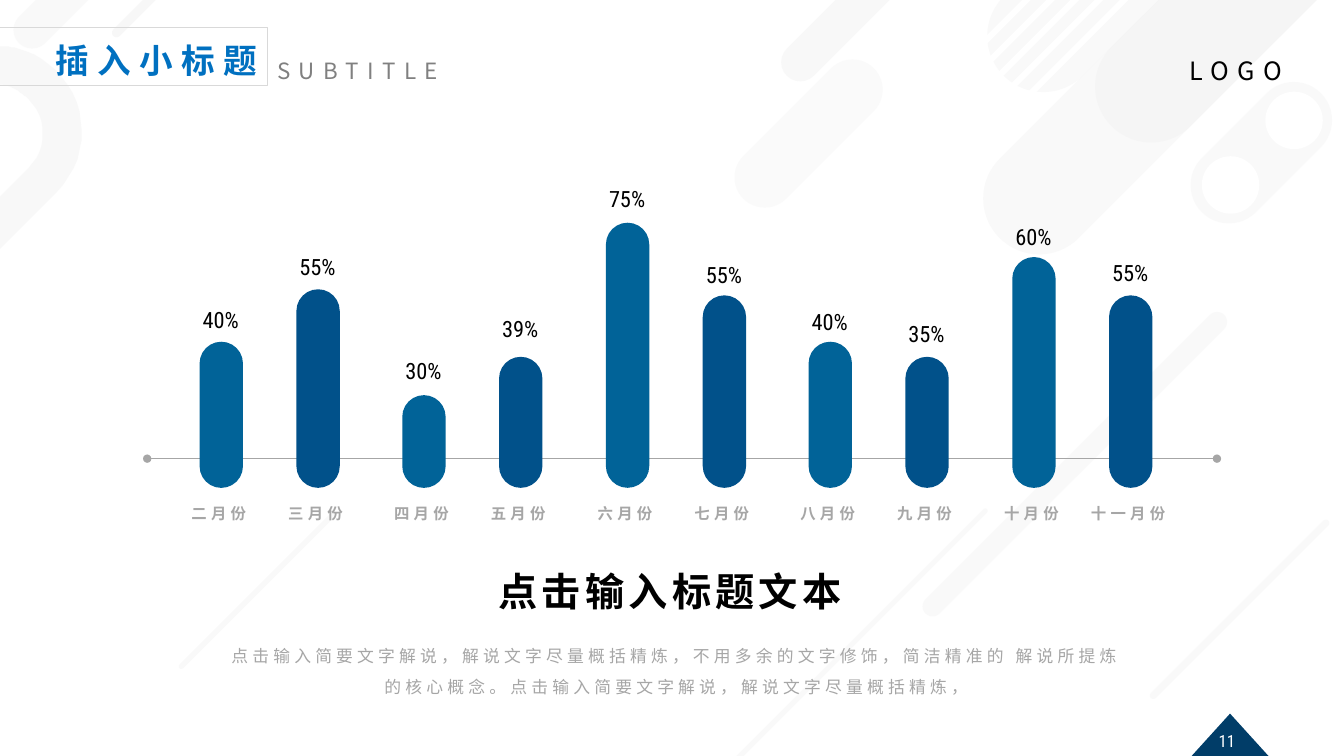
import pptx
import pptx.util
import pptx.dml.color
import pptx.enum.shapes
import pptx.enum.text
import pptx.oxml.ns
import lxml.etree

RGBColor = pptx.dml.color.RGBColor
SHAPE = pptx.enum.shapes.MSO_SHAPE
ALIGN = pptx.enum.text.PP_ALIGN
ANCHOR = pptx.enum.text.MSO_ANCHOR
qn = pptx.oxml.ns.qn

PX = 9144  # EMU in one px, 100 px to the inch

WHITE = RGBColor(0xFF, 0xFF, 0xFF)
BLACK = RGBColor(0x00, 0x00, 0x00)
PALE = RGBColor(0xF2, 0xF2, 0xF2)
BORDER = RGBColor(0xD9, 0xD9, 0xD9)
GREY = RGBColor(0xA6, 0xA6, 0xA6)
DARK_GREY = RGBColor(0x80, 0x80, 0x80)
TITLE_BLUE = RGBColor(0x00, 0x70, 0xC0)
NAVY = RGBColor(0x01, 0x3D, 0x68)
BAR_COLORS = (RGBColor(0x01, 0x63, 0x98), RGBColor(0x01, 0x51, 0x8A))

SANS = "Noto Sans CJK SC"
SANS_JP = "Noto Sans CJK JP"
CONDENSED = "Roboto Condensed"

# Background capsules: left, top, width, height, opacity in percent
CAPSULES = [
    (1153, -288, 111, 614, 46), (1264, -399, 111, 614, 50),
    (1157, -449, 111, 614, 45), (1213, 68, 76, 167, 40),
    (253, 476, 5, 219, 45), (829, 444, 5, 417, 40),
    (1056, 251, 20, 419, 40), (772, 41, 60, 183, 37),
    (826, -81, 38, 183, 50), (1226, 480, 7, 249, 40),
    (157, -83, 9, 139, 60), (49, -75, 37, 138, 40),
]
HOLES = [(1255, 91), (1192, 155)]

# Outline of the ring at the left edge: two points are a line, six a curve
RING_START = (0, 46)
RING = [
    (8, 46), (20, 48, 32, 52, 42, 59), (56, 70), (67, 84),
    (89, 117, 85, 162, 56, 191), (0, 247), (0, 195), (28, 167),
    (47, 148, 47, 117, 28, 98), (21, 91, 12, 86, 3, 84), (0, 84),
]

# Month, value, top of the bar, top of the value label
BARS = [
    ("二月份", "40%", 339, 299), ("三月份", "55%", 287, 246),
    ("四月份", "30%", 392, 349), ("五月份", "39%", 354, 308),
    ("六月份", "75%", 221, 179), ("七月份", "55%", 293, 254),
    ("八月份", "40%", 339, 301), ("九月份", "35%", 354, 313),
    ("十月份", "60%", 255, 216), ("十一月份", "55%", 293, 252),
]
BAR_BOTTOM = 484

DESCRIPTION = ("点击输入简要文字解说，解说文字尽量概括精炼，不用多余的文字修饰，简洁精准的 "
               "解说所提炼的核心概念。点击输入简要文字解说，解说文字尽量概括精炼，")


def scaled(*lengths):
    return [length * PX for length in lengths]


def set_fill(shape, color, opacity=100):
    shape.shadow.inherit = False
    shape.line.fill.background()
    shape.fill.solid()
    shape.fill.fore_color.rgb = color
    if opacity < 100:
        color_element = shape._element.spPr.find(qn("a:solidFill"))[0]
        alpha = lxml.etree.SubElement(color_element, qn("a:alpha"))
        alpha.set("val", str(opacity * 1000))


def add_filled(slide, kind, box, color, opacity=100, rotation=0):
    shape = slide.shapes.add_shape(kind, *scaled(*box))
    if kind == SHAPE.ROUNDED_RECTANGLE:
        shape.adjustments[0] = 0.5
    shape.rotation = rotation
    set_fill(shape, color, opacity)
    return shape


def write(shape, text, size, color, font=SANS, bold=False, spacing=0,
          align=ALIGN.LEFT, anchor=ANCHOR.TOP, wrap=True, inset=None):
    frame = shape.text_frame
    frame.text = text
    frame.word_wrap = wrap
    frame.auto_size = pptx.enum.text.MSO_AUTO_SIZE.NONE
    frame.vertical_anchor = anchor
    if inset is not None:
        frame.margin_left = frame.margin_right = inset
        frame.margin_top = frame.margin_bottom = inset
    paragraph = frame.paragraphs[0]
    paragraph.alignment = align
    run = paragraph.runs[0]
    run.font.size = pptx.util.Pt(size)
    run.font.bold = bold
    run.font.name = font
    run.font.color.rgb = color
    properties = run.font._element
    properties.set("spc", str(spacing * 100))
    east_asian = lxml.etree.Element(qn("a:ea"))
    east_asian.set("typeface", SANS if font == CONDENSED else font)
    properties.find(qn("a:latin")).addnext(east_asian)
    return paragraph


def add_text(slide, box, text, size, color, **style):
    return write(slide.shapes.add_textbox(*scaled(*box)), text, size, color, **style)


def place(slide, placeholder, box):
    """Move a placeholder to its box, in front of the background."""
    placeholder.left, placeholder.top, placeholder.width, placeholder.height = scaled(*box)
    slide.shapes._spTree.append(placeholder._element)


def curve_points(start, curve, steps=12):
    """Points along a cubic curve, without its start."""
    controls = [start, curve[0:2], curve[2:4], curve[4:6]]
    for step in range(1, steps + 1):
        t = step / steps
        weights = ((1 - t) ** 3, 3 * t * (1 - t) ** 2, 3 * t * t * (1 - t), t ** 3)
        yield tuple(sum(w * c[axis] for w, c in zip(weights, controls)) for axis in (0, 1))


def add_ring(slide):
    points = [RING_START]
    for part in RING:
        points.extend([part] if len(part) == 2 else list(curve_points(points[-1], part)))
    builder = slide.shapes.build_freeform(*RING_START, scale=PX)
    builder.add_line_segments(points[1:], close=True)
    set_fill(builder.convert_to_shape(), PALE, 50)


def add_background(slide):
    add_ring(slide)
    for *box, opacity in CAPSULES:
        add_filled(slide, SHAPE.ROUNDED_RECTANGLE, box, PALE, opacity, 45)
    for left, top in HOLES:
        add_filled(slide, SHAPE.OVAL, (left, top, 57, 57), WHITE)
    for index in range(5):
        stripe = (969 + index * 97 // 4, -239, 6, 570)
        add_filled(slide, SHAPE.ROUNDED_RECTANGLE, stripe, WHITE, rotation=45)


def add_axis(slide):
    axis = slide.shapes.add_connector(
        pptx.enum.shapes.MSO_CONNECTOR.STRAIGHT, *scaled(146, 455, 1207, 455))
    axis.line.color.rgb = GREY
    axis.line.width = pptx.util.Pt(0.5)
    line = axis.line._get_or_add_ln()
    for end in ("a:headEnd", "a:tailEnd"):
        lxml.etree.SubElement(line, qn(end)).set("type", "oval")
    lxml.etree.SubElement(axis._element.spPr, qn("a:effectLst"))


def add_bar(slide, index, month, value, top, value_top):
    pair, side = divmod(index, 2)
    left = 198 + pair * 403 // 2 + side * 96
    add_filled(slide, SHAPE.ROUNDED_RECTANGLE, (left, top, 43, BAR_BOTTOM - top), BAR_COLORS[side])
    add_text(slide, (left - 34, 495, 106, 29), month, 11, GREY, font=CONDENSED,
             bold=True, spacing=3, align=ALIGN.CENTER)
    add_text(slide, (left - 32, value_top, 106, 37), value, 16, BLACK,
             font=CONDENSED, align=ALIGN.CENTER)


def add_header(slide):
    title = slide.shapes.title
    place(slide, title, (-113, 27, 378, 58))
    title.line.color.rgb = BORDER
    title.line.width = pptx.util.Pt(0.75)
    write(title, "插入小标题", 24, TITLE_BLUE, bold=True, spacing=6,
          align=ALIGN.RIGHT, anchor=ANCHOR.BOTTOM)
    add_text(slide, (265, 52, 188, 37), "SUBTITLE", 16, DARK_GREY,
             font=SANS_JP, spacing=6, wrap=False)
    add_text(slide, (1170, 50, 126, 40), "LOGO", 18, BLACK, spacing=6, wrap=False)


def add_summary(slide):
    add_text(slide, (480, 563, 369, 47), "点击输入标题文本", 28, BLACK, bold=True,
             spacing=3, align=ALIGN.CENTER, inset=0)
    body = slide.placeholders[1]
    place(slide, body, (224, 631, 894, 57))
    paragraph = write(body, DESCRIPTION, 12, GREY, spacing=3, align=ALIGN.CENTER, inset=0)
    paragraph.line_spacing = 1.5
    paragraph.space_before = pptx.util.Pt(0)
    properties = paragraph._p.get_or_add_pPr()
    properties.set("marL", "0")
    properties.set("indent", "0")
    lxml.etree.SubElement(properties, qn("a:buNone"))


def main():
    presentation = pptx.Presentation()
    presentation.slide_width, presentation.slide_height = scaled(1333, 750)
    slide = presentation.slides.add_slide(presentation.slide_layouts[1])

    add_background(slide)
    add_header(slide)
    # Monthly bars on their axis
    add_axis(slide)
    for index, bar in enumerate(BARS):
        add_bar(slide, index, *bar)
    add_summary(slide)
    # Page number
    add_filled(slide, SHAPE.ISOSCELES_TRIANGLE, (1181, 708, 78, 43), NAVY)
    add_text(slide, (1178, 721, 57, 28), "11", 12, WHITE, font=CONDENSED,
             align=ALIGN.RIGHT, anchor=ANCHOR.MIDDLE)
    presentation.save("out.pptx")


if __name__ == "__main__":
    main()
